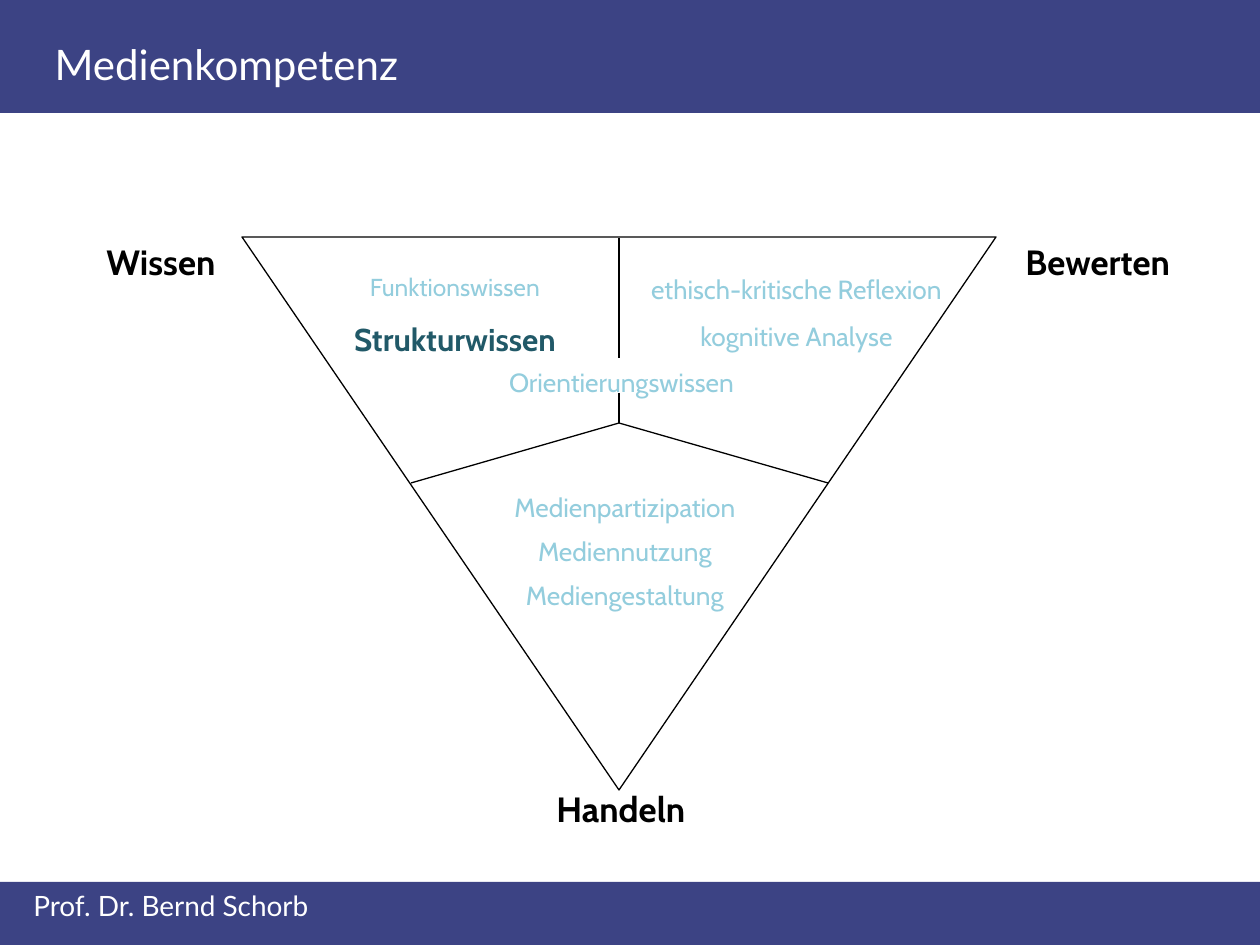
from dataclasses import dataclass

from lxml import etree
from pptx import Presentation
from pptx import util as u
from pptx.dml.color import RGBColor
from pptx.enum import shapes, text
from pptx.oxml.ns import qn


@dataclass(frozen=True)
class Style:
    font: str
    size: int
    color: str
    bold: bool = False


@dataclass(frozen=True)
class Theme:
    band: str = "3C4384"
    outline: str = "000000"
    outline_width: float = 0.75
    title: Style = Style("Lato", 24, "FFFFFF")
    footer: Style = Style("Lato", 16, "FFFFFF")
    corner: Style = Style("Cabin", 20, "000000", True)
    facet: Style = Style("Cabin", 15, "93CDDD")
    small_facet: Style = Style("Cabin", 14, "93CDDD")
    key_facet: Style = Style("Cabin", 18, "215968", True)


THEME = Theme()
EMU_PER_PX = 914400 / 126
WIDTH, HEIGHT = 1260, 945

TITLE = ("Medienkompetenz", (42, 32, 925, 63))
FOOTER = ("Prof. Dr. Bernd Schorb", (21, 882, 1218, 47))
HEADER_BAND = (0, 0, WIDTH, 113)
FOOTER_BAND = (0, 882, WIDTH, 63)

CORNERS = [
    ("Wissen", (94, 234, 139, 55)),
    ("Bewerten", (1013, 234, 185, 55)),
    ("Handeln", (544, 781, 164, 54)),
]
FACETS = [
    ((494, 472, 262, 146), 1.4, [
        ("Medienpartizipation", THEME.facet),
        ("Mediennutzung", THEME.facet),
        ("Mediengestaltung", THEME.facet),
    ]),
    ((331, 251, 248, 115), 1.5, [
        ("Funktionswissen", THEME.small_facet),
        ("Strukturwissen", THEME.key_facet),
    ]),
    ((626, 251, 341, 108), 1.5, [
        ("ethisch-kritische Reflexion", THEME.facet),
        ("kognitive Analyse", THEME.facet),
    ]),
    ((490, 360, 263, 54), 1, [("Orientierungswissen", THEME.facet)]),
]

TRIANGLE = (242, 237, 754, 553)
AXIS = TRIANGLE[0] + TRIANGLE[2] // 2
HUB = (AXIS, 423)
DIVIDERS = [
    ((AXIS, 238), (AXIS, 358)),
    ((AXIS, 393), HUB),
    ((AXIS - 208, 483), HUB),
    (HUB, (AXIS + 209, 483)),
]


def px(values):
    return [u.Emu(round(value * EMU_PER_PX)) for value in values]


def write(frame, lines, align=text.PP_ALIGN.LEFT, spacing=1, wrap=False):
    frame.word_wrap = wrap
    frame.vertical_anchor = text.MSO_ANCHOR.TOP
    frame.text = "\n".join(wording for wording, style in lines)
    for paragraph, (wording, style) in zip(frame.paragraphs, lines):
        paragraph.alignment = align
        paragraph.line_spacing = spacing
        for run in paragraph.runs:
            run.font.name = style.font
            run.font.size = u.Pt(style.size)
            run.font.bold = style.bold
            run.font.color.rgb = RGBColor.from_string(style.color)


def add_text(slide, box, lines, **options):
    write(slide.shapes.add_textbox(*px(box)).text_frame, lines, **options)


def add_band(slide, box):
    band = slide.shapes.add_shape(shapes.MSO_SHAPE.RECTANGLE, *px(box))
    band.shadow.inherit = False
    band.fill.solid()
    band.fill.fore_color.rgb = RGBColor.from_string(THEME.band)
    band.line.fill.background()
    return band


def draw_outline(line):
    line.color.rgb = RGBColor.from_string(THEME.outline)
    line.width = u.Pt(THEME.outline_width)


def add_triangle(slide):
    triangle = slide.shapes.add_shape(
        shapes.MSO_SHAPE.ISOSCELES_TRIANGLE, *px(TRIANGLE))
    triangle.rotation = 180
    triangle.shadow.inherit = False
    triangle.fill.background()
    draw_outline(triangle.line)


def add_divider(slide, start, end):
    divider = slide.shapes.add_connector(
        shapes.MSO_CONNECTOR.STRAIGHT, *px(start + end))
    draw_outline(divider.line)
    etree.SubElement(divider.element.spPr, qn("a:effectLst"))


def main():
    deck = Presentation()
    deck.slide_width, deck.slide_height = px((WIDTH, HEIGHT))
    slide = deck.slides.add_slide(deck.slide_layouts.get_by_name("Title Only"))

    heading = slide.shapes.title
    wording, box = TITLE
    heading.left, heading.top, heading.width, heading.height = px(box)
    write(heading.text_frame, [(wording, THEME.title)], wrap=True)
    heading.element.addprevious(add_band(slide, HEADER_BAND).element)

    add_band(slide, FOOTER_BAND)
    wording, box = FOOTER
    add_text(slide, box, [(wording, THEME.footer)], wrap=True)

    add_triangle(slide)
    for start, end in DIVIDERS:
        add_divider(slide, start, end)
    for wording, box in CORNERS:
        add_text(slide, box, [(wording, THEME.corner)])
    for box, spacing, lines in FACETS:
        add_text(slide, box, lines, align=text.PP_ALIGN.CENTER, spacing=spacing)

    deck.save("out.pptx")


if __name__ == "__main__":
    main()
